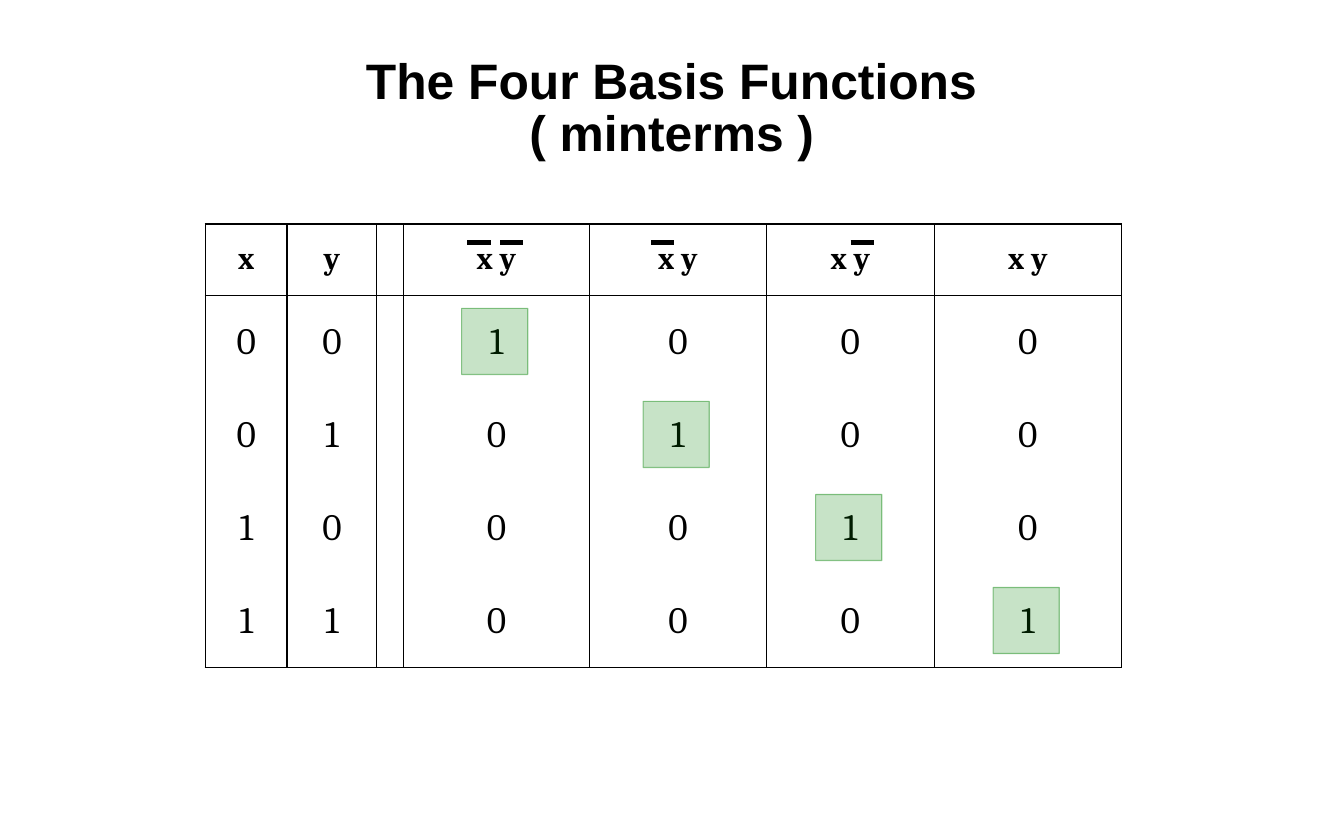
from itertools import accumulate
from lxml import etree
from pptx import Presentation
from pptx.dml.color import RGBColor
from pptx.enum.shapes import MSO_CONNECTOR as Connector, MSO_SHAPE as Shape
from pptx.enum.text import MSO_ANCHOR as Anchor, PP_ALIGN as Align
from pptx.oxml.ns import qn
from pptx.util import Pt

BLACK = RGBColor(0x00, 0x00, 0x00)
GREEN = RGBColor(0x00, 0x80, 0x00)

COLUMN_WIDTHS = [52.6, 57.6, 16.6, 119.5, 113.8, 108, 120.2]
ROW_HEIGHTS = [46.1] + [59.8] * 4
FIRST_MINTERM = 3
HEADINGS = ["x", "y", ""] + ["x y"] * 4
OVERBARS = [(3, -18), (3, 3), (4, -16.6), (5, 0.7)]
OVERBAR_LENGTH = 15
MARK_SIZE = 42.5


def format_paragraph(paragraph, font_name, size, bold):
    paragraph.alignment = Align.CENTER
    for run in paragraph.runs:
        run.font.name = font_name
        run.font.size = Pt(size)
        run.font.bold = bold
        run.font.color.rgb = BLACK


def set_alpha(color_format_parent, percent):
    color = next(color_format_parent.iter(qn("a:srgbClr")))
    etree.SubElement(color, qn("a:alpha"), val=str(percent * 1000))


def set_borders(cell, visible_sides):
    properties = cell._tc.get_or_add_tcPr()
    for index, side in enumerate("LRTB"):
        line = etree.Element(qn(f"a:ln{side}"), w=str(Pt(1)))
        if side in visible_sides:
            fill = etree.SubElement(line, qn("a:solidFill"))
            etree.SubElement(fill, qn("a:srgbClr"), val=str(BLACK))
        else:
            etree.SubElement(line, qn("a:noFill"))
        properties.insert(index, line)


def add_title_line(slide, text, left, top, width, height):
    box = slide.shapes.add_textbox(Pt(left), Pt(top), Pt(width), Pt(height))
    text_frame = box.text_frame
    text_frame.word_wrap = True
    text_frame.vertical_anchor = Anchor.MIDDLE
    text_frame.text = text
    format_paragraph(text_frame.paragraphs[0], "Arial", 32, True)


def truth_rows():
    for minterm in range(4):
        inputs = [str(minterm // 2), str(minterm % 2), ""]
        yield inputs + [str(int(column == minterm)) for column in range(4)]


def add_truth_table(slide, left, top):
    rows = [HEADINGS, *truth_rows()]
    frame = slide.shapes.add_table(
        len(rows), len(HEADINGS), Pt(left), Pt(top),
        Pt(sum(COLUMN_WIDTHS)), Pt(sum(ROW_HEIGHTS)))
    table = frame.table
    table.first_row = False
    table.horz_banding = False
    for column, width in zip(table.columns, COLUMN_WIDTHS):
        column.width = Pt(width)
    for row, height in zip(table.rows, ROW_HEIGHTS):
        row.height = Pt(height)
    for row_index, texts in enumerate(rows):
        header = row_index == 0
        sides = "LR"
        if row_index < 2:
            sides += "T"
        if header or row_index == len(rows) - 1:
            sides += "B"
        for column_index, text in enumerate(texts):
            cell = table.cell(row_index, column_index)
            cell.vertical_anchor = Anchor.MIDDLE
            cell.fill.background()
            set_borders(cell, sides)
            cell.text_frame.text = text
            paragraph = cell.text_frame.paragraphs[0]
            paragraph.space_before = Pt(6 if header else 12)
            format_paragraph(paragraph, "Cambria", 20 if header else 24, header)


def centers(start, sizes):
    return [start + end - size / 2 for end, size in zip(accumulate(sizes), sizes)]


def add_minterm_marks(slide, left, top):
    column_centers = centers(left, COLUMN_WIDTHS)[FIRST_MINTERM:]
    row_centers = centers(top, ROW_HEIGHTS)[1:]
    for x, y in zip(column_centers, row_centers):
        mark = slide.shapes.add_shape(
            Shape.RECTANGLE, Pt(x - MARK_SIZE / 2 - 0.5), Pt(y - MARK_SIZE / 2 - 0.5),
            Pt(MARK_SIZE), Pt(MARK_SIZE))
        mark.shadow.inherit = False
        mark.fill.solid()
        mark.fill.fore_color.rgb = GREEN
        mark.line.color.rgb = GREEN
        mark.line.width = Pt(0.75)
        properties = mark._element.spPr
        set_alpha(properties.find(qn("a:solidFill")), 22)
        set_alpha(properties.find(qn("a:ln")), 43)


def add_overbars(slide, left, top):
    column_centers = centers(left, COLUMN_WIDTHS)
    y = Pt(top + 12)
    for column, offset in OVERBARS:
        start = column_centers[column] + offset
        overbar = slide.shapes.add_connector(
            Connector.STRAIGHT, Pt(start), y, Pt(start + OVERBAR_LENGTH), y)
        overbar.line.color.rgb = BLACK
        overbar.line.width = Pt(3)
        etree.SubElement(overbar._element.spPr, qn("a:effectLst"))


def main():
    presentation = Presentation()
    presentation.slide_width = Pt(864)
    presentation.slide_height = Pt(540)
    slide = presentation.slides.add_slide(presentation.slide_layouts[6])
    table_left, table_top = 132, 144
    add_title_line(slide, "The Four Basis Functions", 0, 24, 864, 54)
    add_truth_table(slide, table_left, table_top)
    add_minterm_marks(slide, table_left, table_top)
    add_overbars(slide, table_left, table_top)
    add_title_line(slide, "( minterms )", 72, 57.6, 720, 54)
    presentation.save("out.pptx")


if __name__ == "__main__":
    main()
